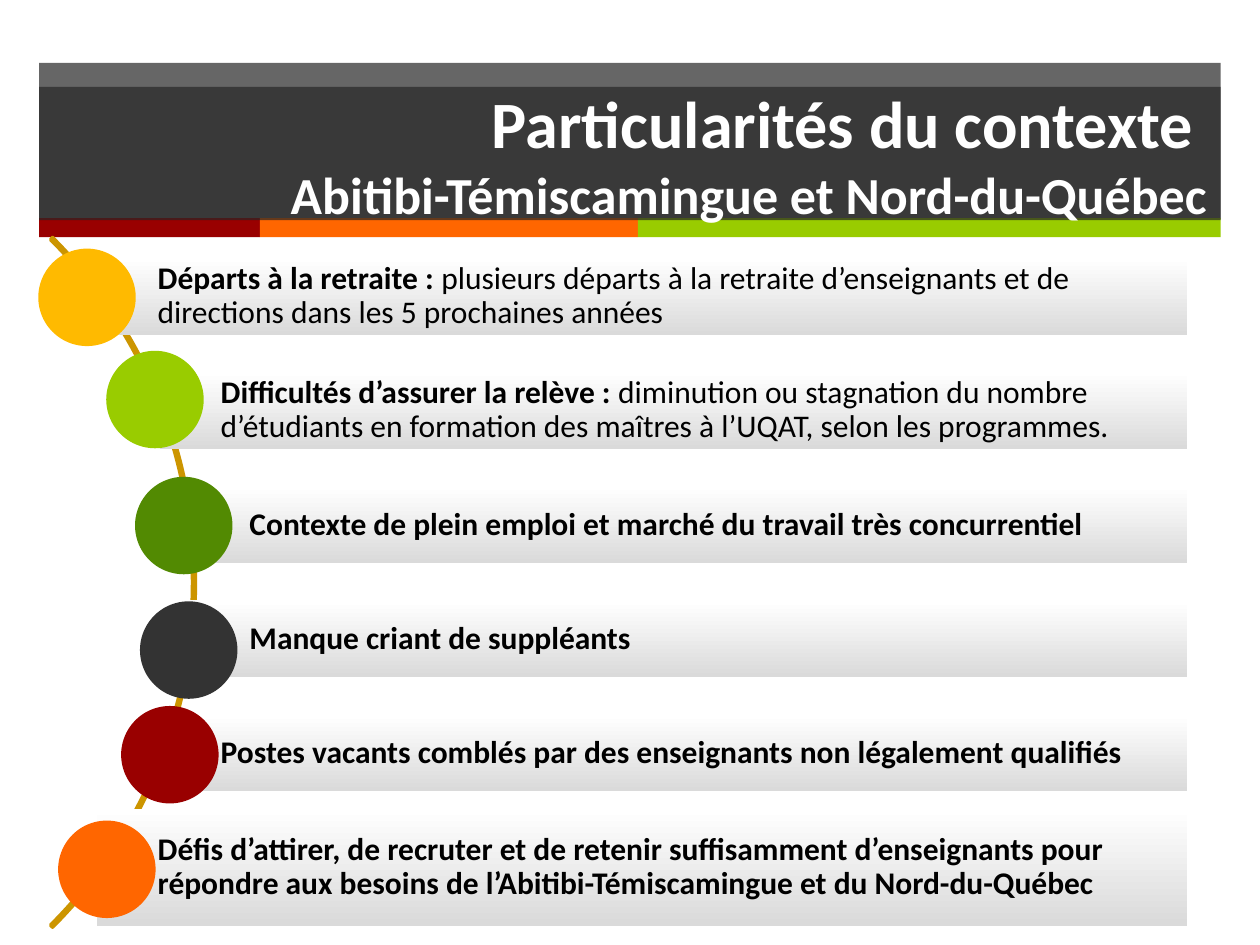
from dataclasses import dataclass

from lxml.etree import SubElement
from pptx import Presentation
from pptx.dml.color import RGBColor as Rgb
from pptx.enum.shapes import MSO_SHAPE as Geo
from pptx.enum.text import MSO_ANCHOR as Anchor, PP_ALIGN as Align
from pptx.oxml.ns import qn
from pptx.util import Cm, Pt


@dataclass(frozen=True)
class Theme:
    font: str = "Calibri"
    head: float = 37.8
    sub: float = 29.7
    body: float = 18
    dark: str = "262626"
    white: str = "FFFFFF"
    black: str = "000000"
    grey: str = "DADADA"
    arc: str = "CC9500"
    red: str = "990000"
    orange: str = "FF6600"
    lime: str = "99CC00"
    amber: str = "FFBA00"
    green: str = "528A02"
    coal: str = "333333"


T = Theme()
color = Rgb.from_string

ROWS = [
    (1.96, 1.55, 0.79, 5.03, T.amber, "Départs à la retraite : ",
     "plusieurs départs à la retraite d’enseignants et de directions "
     "dans les 5 prochaines années"),
    (3.23, 1.55, 2.16, 7.09, T.lime, "Difficultés d’assurer la relève : ",
     "diminution ou stagnation du nombre d’étudiants en formation "
     "des maîtres à l’UQAT, selon les programmes."),
    (3.81, 1.55, 2.74, 9.63, T.green,
     "Contexte de plein emploi et marché du travail très concurrentiel", ""),
    (3.81, 1.55, 2.84, 12.14, T.coal, "Manque criant de suppléants", ""),
    (3.23, 1.55, 2.46, 14.25, T.red,
     "Postes vacants comblés par des enseignants non légalement qualifiés", ""),
    (1.96, 2.36, 1.19, 16.56, T.orange,
     "Défis d’attirer, de recruter et de retenir suffisamment d’enseignants "
     "pour répondre aux besoins de l’Abitibi-Témiscamingue et du "
     "Nord-du-Québec", ""),
]


def add_form(slide, kind, x, y, w, h, fill=None, alpha=None):
    form = slide.shapes.add_shape(kind, Cm(x), Cm(y), Cm(w), Cm(h))
    form.shadow.inherit = False
    form.line.fill.background()
    if fill is None:
        form.fill.background()
        return form
    form.fill.solid()
    form.fill.fore_color.rgb = color(fill)
    if alpha:
        tint = form.fill._xPr.find(".//" + qn("a:srgbClr"))
        SubElement(tint, qn("a:alpha"), val=str(alpha * 1000))
    return form


def set_line(form, tone, width):
    form.line.color.rgb = color(tone)
    form.line.width = Pt(width)


def set_font(font, tone):
    font.name = T.font
    font.color.rgb = color(tone)


def draw_head(slide, x, y, w):
    add_form(slide, Geo.RECTANGLE, x, y, w, 3.15, T.dark, 70)
    left = x
    for width, tone in ((4.45, T.red), (7.62, T.orange), (w - 12.07, T.lime)):
        add_form(slide, Geo.RECTANGLE, left, y + 3.13, width, 0.38, tone)
        left += width
    title = add_form(slide, Geo.RECTANGLE, x, y + 0.48, w, 2.69, T.dark, 70)
    frame = title.text_frame
    frame.word_wrap = True
    frame.vertical_anchor = Anchor.MIDDLE
    para = frame.paragraphs[0]
    para.alignment = Align.RIGHT
    set_font(para.font, T.white)
    para.font.bold = True
    first = para.add_run()
    first.text = "Particularités du contexte "
    first.font.size = Pt(T.head)
    para.add_line_break()
    second = para.add_run()
    second.text = "Abitibi-Témiscamingue et Nord-du-Québec"
    second.font.size = Pt(T.sub)


def draw_arc(slide, x, y, size):
    arc = add_form(slide, Geo.BLOCK_ARC, x, y, size, size)
    for i, value in enumerate((189, 27, 0.003)):
        arc.adjustments[i] = value
    set_line(arc, T.arc, 2)


def draw_bar(slide, x, y, w, h, lead, rest):
    bar = add_form(slide, Geo.RECTANGLE, x, y, w, h)
    bar.fill.gradient()
    bar.fill.gradient_angle = 90
    for stop, tone, place in zip(bar.fill.gradient_stops,
                                 (T.grey, T.white), (0, 1)):
        stop.color.rgb = color(tone)
        stop.position = place
    frame = bar.text_frame
    frame.word_wrap = True
    frame.vertical_anchor = Anchor.MIDDLE
    frame.margin_left = Cm(1.22)
    frame.margin_top = frame.margin_right = frame.margin_bottom = Cm(0.13)
    para = frame.paragraphs[0]
    para.alignment = Align.LEFT
    para.line_spacing = 0.9
    set_font(para.font, T.black)
    para.font.size = Pt(T.body)
    for words, bold in ((lead, True), (rest, False)):
        if words:
            run = para.add_run()
            run.text = words
            run.font.bold = bold


def draw_list(slide, right, mid, pitch):
    for i, (x, h, dot_x, dot_y, tone, lead, rest) in enumerate(ROWS):
        top = mid + i * pitch - h / 2
        draw_bar(slide, x, top, right - x, h, lead, rest)
        dot = add_form(slide, Geo.OVAL, dot_x, dot_y, 1.93, 1.93, tone)
        set_line(dot, tone, 1)


def main():
    deck = Presentation()
    deck.slide_width, deck.slide_height = Cm(25.4), Cm(19.05)
    slide = deck.slides.add_slide(deck.slide_layouts[6])
    draw_head(slide, 0.79, 1.27, 23.82)
    draw_arc(slide, -15.72, 1.91, 19.66)
    draw_list(slide, 23.93, 5.98, 2.3)
    deck.save("out.pptx")


if __name__ == "__main__":
    main()
